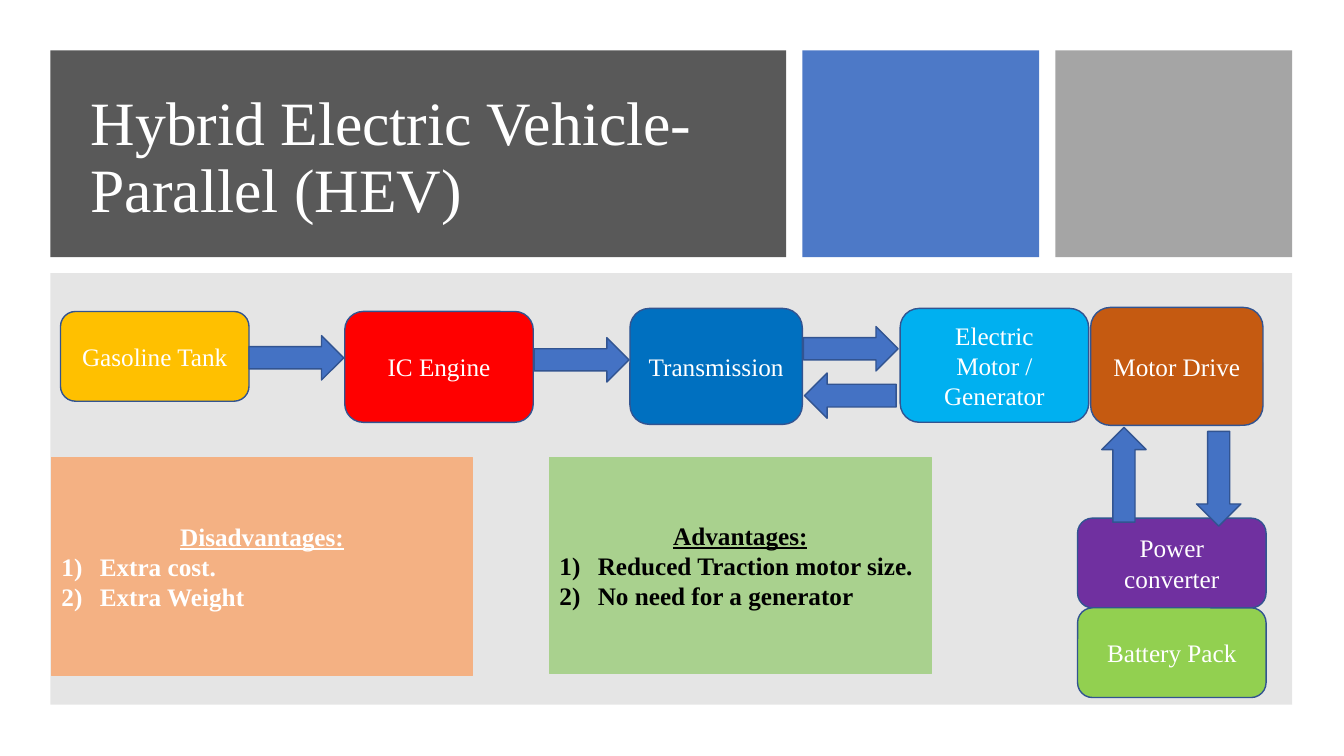
from lxml.etree import SubElement
from pptx import Presentation
from pptx.dml.color import RGBColor
from pptx.enum.shapes import MSO_SHAPE
from pptx.enum.text import MSO_ANCHOR, MSO_AUTO_SIZE, PP_ALIGN
from pptx.oxml.ns import qn
from pptx.util import Inches, Pt

COLUMNS, ROWS = 133.33, 75
WHITE, BLACK, OUTLINE, ARROW = "FFFFFF", "000000", "325491", "4472C4"


def paint(color_format, color):
    color_format.rgb = RGBColor.from_string(color)


def write(paragraph, text, size=18, color=WHITE, bold=False, underline=False,
          align=PP_ALIGN.CENTER, spacing=1.0):
    paragraph.alignment = align
    paragraph.line_spacing = spacing
    paragraph.space_before = Pt(0)
    run = paragraph.add_run()
    run.text = text
    run.font.name = "Times New Roman"
    run.font.size = Pt(size)
    run.font.bold = bold
    run.font.underline = underline
    paint(run.font.color, color)


class Deck:
    def __init__(self, layout):
        self.presentation = Presentation()
        self.presentation.slide_width = Inches(13.33)
        self.presentation.slide_height = Inches(7.5)
        self.slide = self.presentation.slides.add_slide(self.presentation.slide_layouts[layout])

    def frame(self, column, row, columns, rows):
        cell_width = self.presentation.slide_width / COLUMNS
        cell_height = self.presentation.slide_height / ROWS
        return [round(length) for length in (column * cell_width, row * cell_height,
                                             columns * cell_width, rows * cell_height)]

    def style(self, element, fill, line=None, opacity=None):
        element.fill.solid()
        paint(element.fill.fore_color, fill)
        if opacity:
            tint = element.fill._xPr.find(".//" + qn("a:srgbClr"))
            SubElement(tint, qn("a:alpha"), val=str(opacity * 1000))
        if line:
            element.line.width = Pt(1)
            paint(element.line.color, line)
        else:
            element.line.fill.background()

    def shape(self, kind, at, fill, line=None, opacity=None):
        element = self.slide.shapes.add_shape(kind, *self.frame(*at))
        element.shadow.inherit = False
        self.style(element, fill, line, opacity)
        return element

    def stage(self, text, at, fill):
        block = self.shape(MSO_SHAPE.ROUNDED_RECTANGLE, at, fill, OUTLINE)
        block.text_frame.word_wrap = True
        block.text_frame.vertical_anchor = MSO_ANCHOR.MIDDLE
        write(block.text_frame.paragraphs[0], text)

    def arrow(self, at, kind=MSO_SHAPE.RIGHT_ARROW, rotation=0):
        self.shape(kind, at, ARROW, OUTLINE).rotation = rotation

    def placeholder(self, index, at):
        holder = self.slide.placeholders[index]
        self.slide.shapes.element.append(holder.element)
        holder.left, holder.top, holder.width, holder.height = self.frame(*at)
        holder.text_frame.word_wrap = True
        holder.text_frame.auto_size = MSO_AUTO_SIZE.NONE
        holder.text_frame.vertical_anchor = MSO_ANCHOR.MIDDLE
        return holder

    def title(self, text, at):
        heading = self.placeholder(0, at)
        write(heading.text_frame.paragraphs[0], text, size=44, align=PP_ALIGN.LEFT, spacing=0.9)

    def numbered_list(self, index, heading, points, at, fill, color):
        panel = self.placeholder(index, at)
        self.style(panel, fill, fill)
        first = panel.text_frame.paragraphs[0]
        write(first, heading, color=color, bold=True, underline=True)
        properties = first._p.get_or_add_pPr()
        properties.set("marL", "0")
        properties.set("indent", "0")
        SubElement(properties, qn("a:buNone"))
        for point in points:
            paragraph = panel.text_frame.add_paragraph()
            write(paragraph, point, color=color, bold=True, align=PP_ALIGN.LEFT)
            properties = paragraph._p.get_or_add_pPr()
            properties.set("marL", str(Inches(0.38)))
            properties.set("indent", str(-Inches(0.38)))
            SubElement(properties, qn("a:buFont"), typeface="Times New Roman")
            SubElement(properties, qn("a:buAutoNum"), type="arabicParenR")


def main():
    deck = Deck(layout=3)
    for at, fill, opacity in [
        ((5, 5, 73, 20.5), "595959", None),
        ((79.6, 5, 23.5, 20.5), ARROW, 95),
        ((104.7, 5, 23.5, 20.5), "A5A5A5", None),
        ((5, 27.1, 123.2, 42.8), "808080", 20),
    ]:
        deck.shape(MSO_SHAPE.RECTANGLE, at, fill, opacity=opacity)
    deck.title("Hybrid Electric Vehicle- Parallel (HEV)", (8, 8, 66.6, 15.6))

    for text, at, fill in [
        ("Gasoline Tank", (6, 30.9, 18.7, 8.9), "FFC000"),
        ("IC Engine", (34.2, 30.9, 18.7, 11), "FF0000"),
        ("Electric Motor / Generator", (89.3, 30.6, 18.7, 11.3), "00B0F0"),
        ("Power converter", (106.9, 51.4, 18.7, 8.9), "7030A0"),
        ("Battery Pack", (106.9, 60.3, 18.7, 8.9), "92D050"),
        ("Motor Drive", (108.2, 30.5, 17.1, 11.7), "C55A11"),
        ("Transmission", (62.5, 30.6, 17.1, 11.5), "0070C0"),
    ]:
        deck.stage(text, at, fill)

    for column, row, rotation in [
        (24.7, 33.3, 0), (53, 33.5, 0), (79.7, 32.4, 0),
        (106.8, 44.9, 270), (116.2, 45.3, 90),
    ]:
        deck.arrow((column, row, 9.4, 4.4), rotation=rotation)
    deck.arrow((79.8, 37, 9.1, 4.5), MSO_SHAPE.LEFT_ARROW)

    deck.numbered_list(1, "Disadvantages:", ["Extra cost.", "Extra Weight"],
                       (5.1, 45.4, 41.8, 21.6), "F4B183", WHITE)
    deck.numbered_list(2, "Advantages:",
                       ["Reduced Traction motor size.", "No need for a generator"],
                       (54.5, 45.4, 37.9, 21.4), "A9D18E", BLACK)
    deck.presentation.save("out.pptx")


if __name__ == "__main__":
    main()
